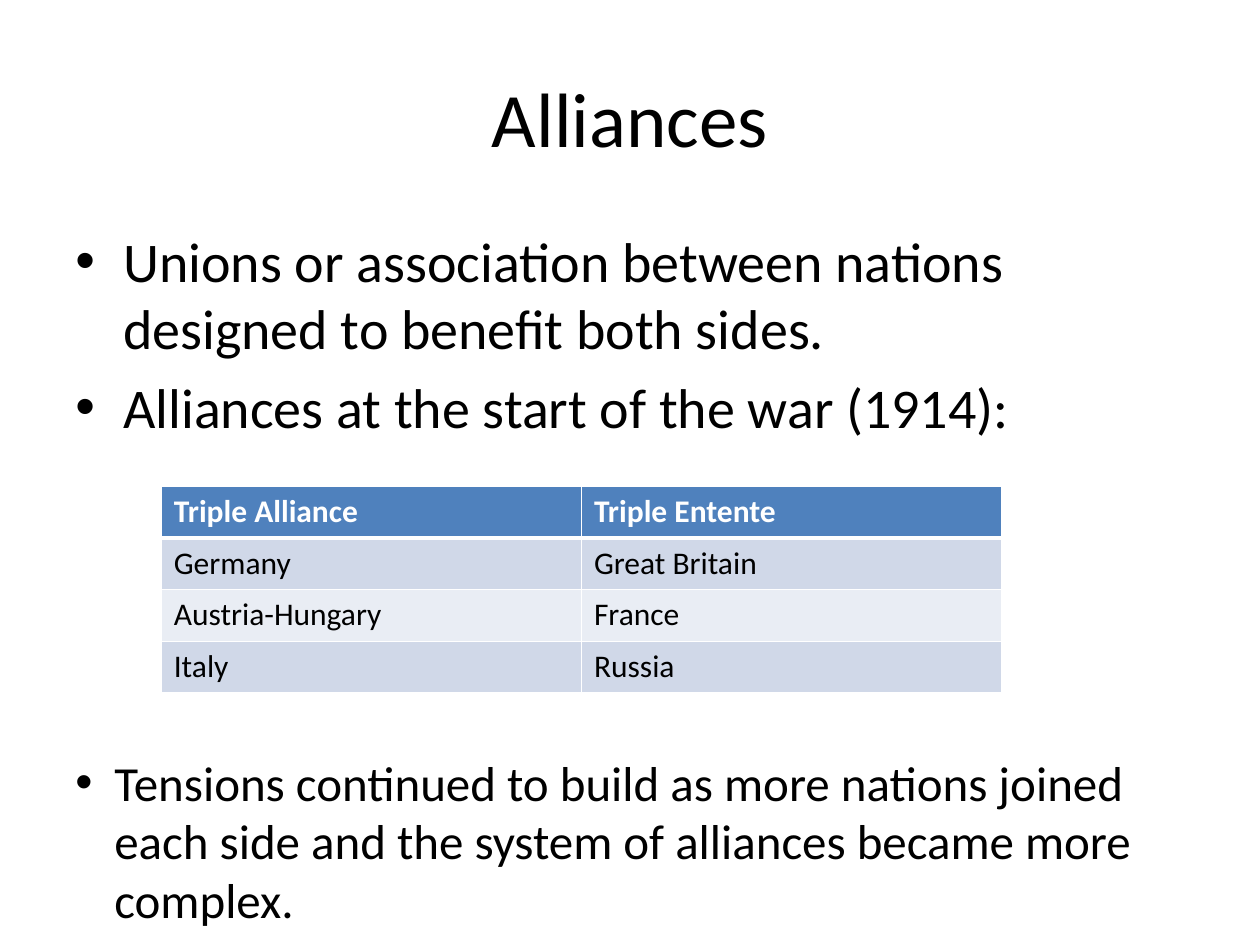
from pptx import Presentation
from pptx.dml.color import RGBColor
from pptx.enum.text import MSO_ANCHOR, PP_ALIGN
from pptx.oxml.ns import qn
from pptx.util import Inches, Pt
from lxml import etree

CENTER = PP_ALIGN.CENTER
MIDDLE, TOP = MSO_ANCHOR.MIDDLE, MSO_ANCHOR.TOP

FONT = "Calibri"
COLORS = {
    "text": "000000",
    "header": "4F81BD",
    "header_text": "FFFFFF",
    "odd_row": "D0D8E8",
    "even_row": "E9EDF4",
    "border": "FFFFFF",
}

# Content
TITLE = "Alliances"
DEFINITION = [
    "Unions or association between nations designed to benefit both sides.",
    "Alliances at the start of the war (1914):",
]
MEMBERS = [
    ("Triple Alliance", "Triple Entente"),
    ("Germany", "Great Britain"),
    ("Austria-Hungary", "France"),
    ("Italy", "Russia"),
]
OUTCOME = [
    "Tensions continued to build as more nations joined each side "
    "and the system of alliances became more complex.",
]


def style_runs(paragraph, size, color="text", bold=False):
    for run in paragraph.runs:
        run.font.name = FONT
        run.font.size = Pt(size)
        run.font.bold = bold
        run.font.color.rgb = RGBColor.from_string(COLORS[color])


def add_bullet(paragraph, indent):
    props = paragraph._p.get_or_add_pPr()
    props.set("marL", str(Inches(indent)))
    props.set("indent", str(-Inches(indent)))
    etree.SubElement(props, qn("a:buFont"), typeface="Arial")
    etree.SubElement(props, qn("a:buChar"), char="•")


def add_text(slide, lines, box, size, anchor=TOP, align=None, indent=None, before=0):
    frame = slide.shapes.add_textbox(*map(Inches, box)).text_frame
    frame.word_wrap = True
    frame.vertical_anchor = anchor
    frame.text = "\n".join(lines)
    for paragraph in frame.paragraphs:
        paragraph.alignment = align
        paragraph.space_before = Pt(before)
        if indent:
            add_bullet(paragraph, indent)
        style_runs(paragraph, size)


def add_borders(cell, bottom):
    props = cell._tc.get_or_add_tcPr()
    for side, width in (("L", 1), ("R", 1), ("T", 1), ("B", bottom)):
        line = etree.SubElement(props, qn(f"a:ln{side}"), w=str(Pt(width)))
        fill = etree.SubElement(line, qn("a:solidFill"))
        etree.SubElement(fill, qn("a:srgbClr"), val=COLORS["border"])


def add_members_table(slide, left, top, width, row_height):
    table = slide.shapes.add_table(
        len(MEMBERS), len(MEMBERS[0]), Inches(left), Inches(top),
        Inches(width), Inches(row_height * len(MEMBERS)),
    ).table
    for r, names in enumerate(MEMBERS):
        is_header = r == 0
        fill = "header" if is_header else "odd_row" if r % 2 else "even_row"
        for c, name in enumerate(names):
            cell = table.cell(r, c)
            cell.text = name
            add_borders(cell, bottom=3 if is_header else 1)
            cell.fill.solid()
            cell.fill.fore_color.rgb = RGBColor.from_string(COLORS[fill])
            style_runs(cell.text_frame.paragraphs[0], 18,
                       "header_text" if is_header else "text", is_header)


def main():
    deck = Presentation()
    deck.slide_width, deck.slide_height = Inches(10), Inches(7.5)
    slide = deck.slides.add_slide(deck.slide_layouts[6])

    # Title and definition
    add_text(slide, [TITLE], (0.5, 0.3, 9, 1.25), 44, MIDDLE, CENTER)
    add_text(slide, DEFINITION, (0.5, 1.75, 9, 3.9), 32, indent=0.38, before=6.4)

    # Members of each alliance
    add_members_table(slide, 1.28, 3.86, 6.67, 0.41)

    # Outcome
    add_text(slide, OUTCOME, (0.5, 5.92, 9, 1.51), 28, indent=0.31)

    deck.save("out.pptx")


if __name__ == "__main__":
    main()
